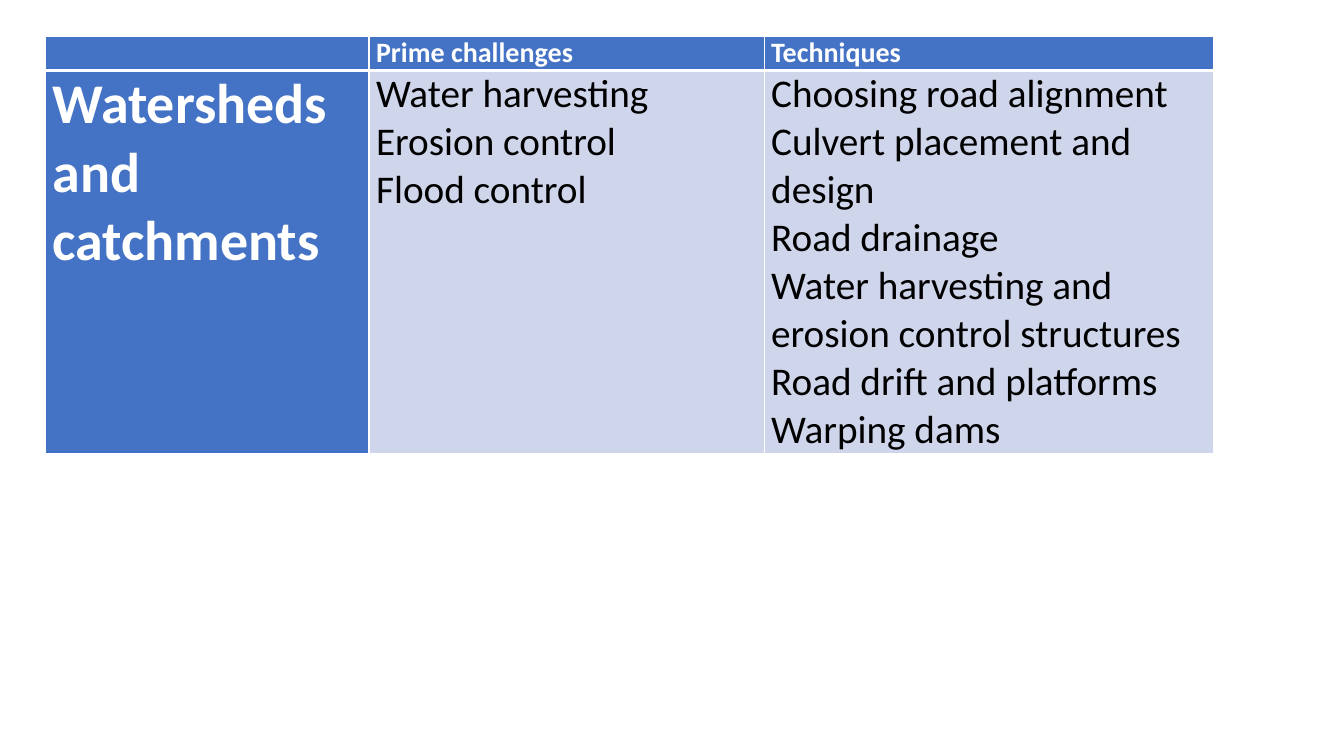
from lxml.etree import SubElement
from pptx import Presentation
from pptx.dml.color import RGBColor
from pptx.oxml.ns import qn
from pptx.util import Inches, Pt

BLUE, PALE, WHITE, BLACK = "4472C4", "CFD5EA", "FFFFFF", "000000"
COLUMNS = (3.21, 3.92, 4.46)
ROWS = (0.34, 3.79)
HEADINGS = ("", "Prime challenges", "Techniques")
TOPIC = "Watersheds and catchments"
CHALLENGES = ("Water harvesting", "Erosion control", "Flood control")
TECHNIQUES = (
    "Choosing road alignment",
    "Culvert placement and design",
    "Road drainage",
    "Water harvesting and erosion control structures",
    "Road drift and platforms Warping dams",
)


def color(value):
    return RGBColor.from_string(value)


def write(cell, lines, size=20, ink=WHITE, bold=True):
    frame = cell.text_frame
    for index, line in enumerate(lines):
        para = frame.add_paragraph() if index else frame.paragraphs[0]
        if line:
            span = para.add_run()
            span.text = line
            span.font.name = "Calibri"
            span.font.size = Pt(size)
            span.font.bold = bold
            span.font.color.rgb = color(ink)


def draw_borders(cell, **widths):
    properties = cell._tc.get_or_add_tcPr()
    for side in "LRTB":
        line = SubElement(properties, qn(f"a:ln{side}"), w=str(Pt(widths.get(side, 1))))
        fill = SubElement(line, qn("a:solidFill"))
        SubElement(fill, qn("a:srgbClr"), val=WHITE)


def style_cell(cell, fill, **widths):
    cell.margin_left = cell.margin_right = Inches(0.07)
    cell.margin_top = cell.margin_bottom = 0
    draw_borders(cell, **widths)
    cell.fill.solid()
    cell.fill.fore_color.rgb = color(fill)


def add_challenge_table(page, left, top):
    box = page.shapes.add_table(
        len(ROWS), len(COLUMNS), Inches(left), Inches(top),
        Inches(sum(COLUMNS)), Inches(sum(ROWS)),
    )
    table = box.table
    table.first_col = True
    for column, width in zip(table.columns, COLUMNS):
        column.width = Inches(width)
    for row, height in zip(table.rows, ROWS):
        row.height = Inches(height)

    for index, heading in enumerate(HEADINGS):
        style_cell(table.cell(0, index), BLUE, B=3)
        write(table.cell(0, index), [heading])

    topic = table.cell(1, 0)
    style_cell(topic, BLUE, T=3)
    write(topic, [TOPIC], size=40)
    for index, lines in enumerate((CHALLENGES, TECHNIQUES), 1):
        style_cell(table.cell(1, index), PALE, T=3)
        write(table.cell(1, index), lines, size=28, ink=BLACK, bold=False)


def main():
    deck = Presentation()
    deck.slide_width, deck.slide_height = Inches(13.33), Inches(7.5)
    page = deck.slides.add_slide(deck.slide_layouts[6])
    add_challenge_table(page, 0.45, 0.36)
    deck.save("out.pptx")


if __name__ == "__main__":
    main()
